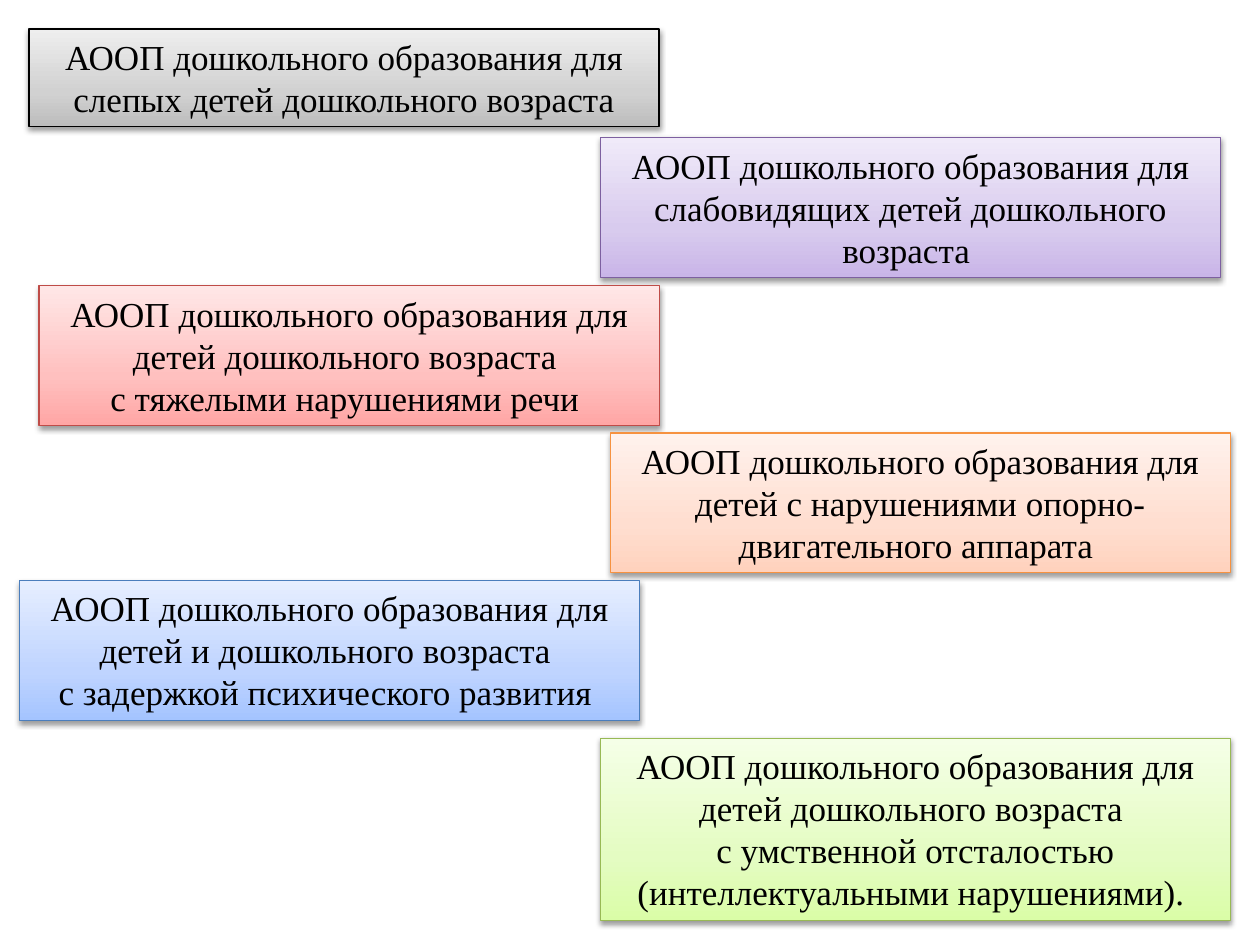
from copy import deepcopy

from lxml import etree
from pptx import Presentation
from pptx.dml.color import RGBColor
from pptx.enum.shapes import MSO_SHAPE
from pptx.enum.text import MSO_ANCHOR, MSO_AUTO_SIZE, PP_ALIGN
from pptx.oxml.ns import qn
from pptx.util import Pt

RECT = MSO_SHAPE.RECTANGLE
TOP, MIDDLE = MSO_ANCHOR.TOP, MSO_ANCHOR.MIDDLE
CENTER = PP_ALIGN.CENTER
GROW = MSO_AUTO_SIZE.SHAPE_TO_FIT_TEXT

BLACK = RGBColor(0x00, 0x00, 0x00)
GREY = (RGBColor(0xBD, 0xBD, 0xBD), RGBColor(0xD1, 0xD1, 0xD1),
        RGBColor(0xEE, 0xEE, 0xEE), BLACK)
PURPLE = (RGBColor(0xC9, 0xB5, 0xE8), RGBColor(0xD8, 0xCB, 0xEE),
          RGBColor(0xF0, 0xEA, 0xF9), RGBColor(0x7D, 0x60, 0xA0))
RED = (RGBColor(0xFF, 0xA6, 0xA5), RGBColor(0xFF, 0xC0, 0xBF),
       RGBColor(0xFF, 0xE7, 0xE7), RGBColor(0xBF, 0x4C, 0x48))
ORANGE = (RGBColor(0xFF, 0xD2, 0xBD), RGBColor(0xFF, 0xDE, 0xD0),
          RGBColor(0xFF, 0xF2, 0xED), RGBColor(0xF6, 0x92, 0x40))
BLUE = (RGBColor(0xA4, 0xC4, 0xFF), RGBColor(0xBF, 0xD4, 0xFF),
        RGBColor(0xE6, 0xEE, 0xFF), RGBColor(0x4B, 0x7E, 0xBC))
GREEN = (RGBColor(0xDA, 0xFD, 0xA7), RGBColor(0xE4, 0xFC, 0xC2),
         RGBColor(0xF5, 0xFF, 0xE7), RGBColor(0x98, 0xB9, 0x55))

STOPS = (0, 0.35, 1)
FONT = "Times New Roman"
LEAD = "АООП дошкольного образования для "
CARDS = [
    ((16.6, 16.6, 360, 55.7), GREY, TOP,
     ["слепых детей дошкольного возраста"]),
    ((343.1, 78.5, 354.4, 80), PURPLE, MIDDLE,
     ["слабовидящих детей дошкольного возраста "]),
    ((22.4, 163.1, 354.4, 80), RED, MIDDLE,
     ["детей дошкольного возраста ", "с тяжелыми нарушениями речи "]),
    ((348.7, 247.4, 354.4, 80), ORANGE, TOP,
     ["детей с нарушениями опорно-двигательного аппарата "]),
    ((11.2, 331.7, 354.4, 80), BLUE, TOP,
     ["детей и дошкольного возраста ",
      "с задержкой психического развития "]),
    ((343.1, 421.9, 360, 104.2), GREEN, TOP,
     ["детей дошкольного возраста ",
      "с умственной отсталостью (интеллектуальными нарушениями). "]),
]


def blend(shape, tones):
    """Fill the shape with a three-stop gradient rising from its base."""
    fill = shape.fill
    fill.gradient()
    fill.gradient_angle = 90
    stops = shape._element.spPr.find(qn("a:gradFill")).find(qn("a:gsLst"))
    stops.append(deepcopy(stops[-1]))
    for stop, place, tone in zip(fill.gradient_stops, STOPS, tones):
        stop.position = place
        stop.color.rgb = tone


def shade(shape):
    """Give the shape a soft shadow straight below it."""
    shape.shadow.inherit = False
    effects = shape._element.spPr.find(qn("a:effectLst"))
    outer = etree.SubElement(effects, qn("a:outerShdw"), blurRad=str(Pt(3.1)),
                             dist=str(Pt(1.6)), dir="5400000", rotWithShape="0")
    color = etree.SubElement(outer, qn("a:srgbClr"), val=str(BLACK))
    etree.SubElement(color, qn("a:alpha"), val="38000")


def card(slide, box, tones, anchor, lines):
    """Place one programme card in the box."""
    shape = slide.shapes.add_shape(RECT, *map(Pt, box))
    blend(shape, tones[:3])
    shape.line.color.rgb = tones[3]
    shape.line.width = Pt(0.75)
    shade(shape)
    frame = shape.text_frame
    frame.word_wrap = True
    frame.auto_size = GROW
    frame.vertical_anchor = anchor
    for row, line in enumerate(lines):
        para = frame.add_paragraph() if row else frame.paragraphs[0]
        para.alignment = CENTER
        run = para.add_run()
        run.text = line if row else LEAD + line
        run.font.name = FONT
        run.font.size = Pt(20)
        run.font.color.rgb = BLACK


def main():
    """Build the slide and save it."""
    deck = Presentation()
    deck.slide_width, deck.slide_height = Pt(720), Pt(540)
    slide = deck.slides.add_slide(deck.slide_layouts[6])
    for entry in CARDS:
        card(slide, *entry)
    deck.save("out.pptx")


if __name__ == "__main__":
    main()
